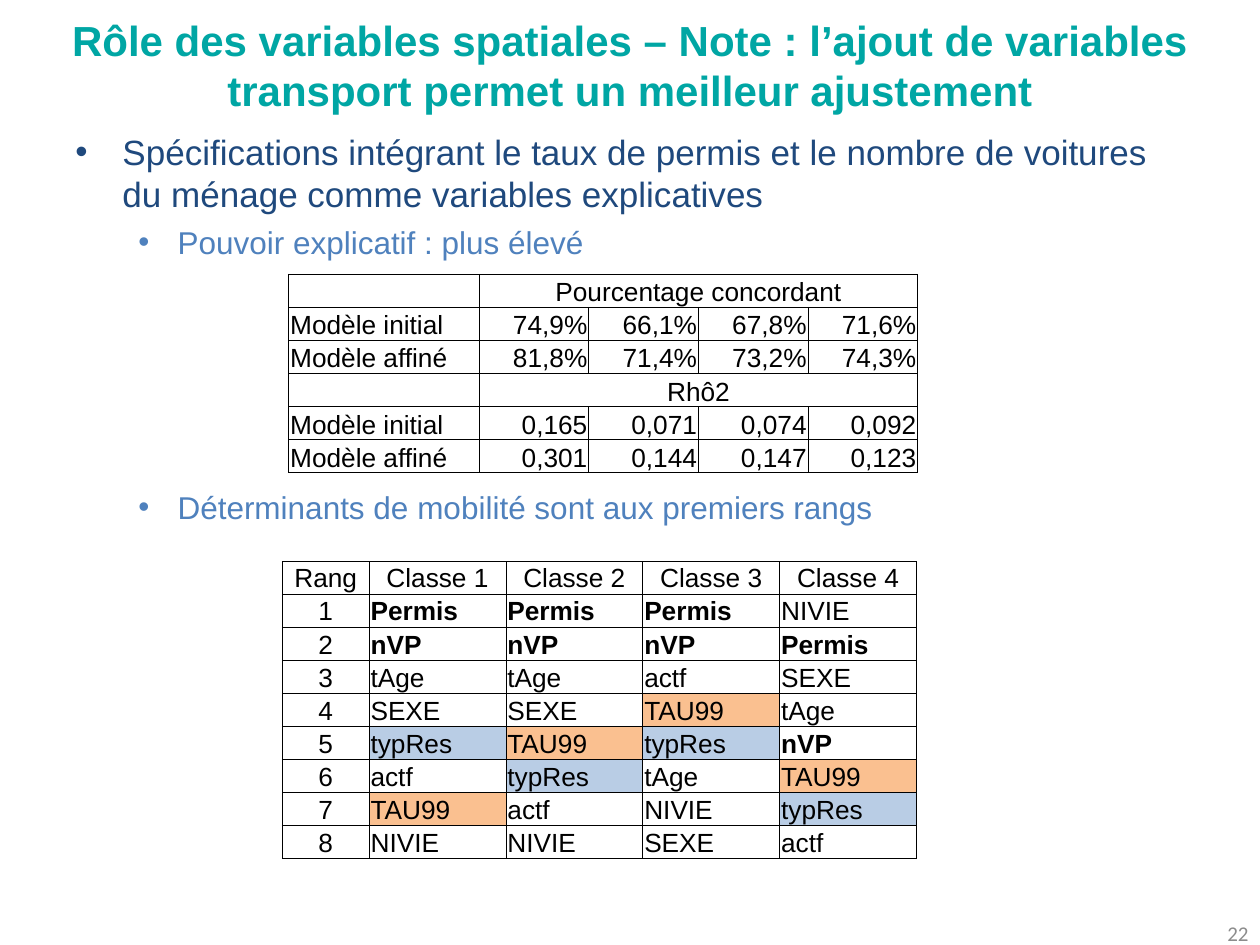
from dataclasses import dataclass

from lxml import etree
from pptx import Presentation
from pptx.dml.color import RGBColor
from pptx.enum.text import MSO_ANCHOR, PP_ALIGN
from pptx.oxml.ns import qn
from pptx.util import Cm, Pt

LEFT, CENTER, RIGHT = PP_ALIGN.LEFT, PP_ALIGN.CENTER, PP_ALIGN.RIGHT
TOP, MIDDLE, BOTTOM = MSO_ANCHOR.TOP, MSO_ANCHOR.MIDDLE, MSO_ANCHOR.BOTTOM


@dataclass(frozen=True)
class Theme:
    font: str = "Arial"
    number_font: str = "Calibri"
    title: str = "00A6A4"
    point: str = "1F497D"
    subpoint: str = "4F81BD"
    number: str = "8C8C8C"
    ink: str = "000000"
    title_size: int = 24
    point_size: int = 20
    subpoint_size: int = 18
    table_size: int = 15
    number_size: int = 12
    border: float = 0.5


THEME = Theme()
TITLE = "Rôle des variables spatiales – Note : l’ajout de variables transport permet un meilleur ajustement"
PAGE_NUMBER = "22"

# text, level, space before in points
BULLETS = [
    ("Spécifications intégrant le taux de permis et le nombre de voitures du ménage comme variables explicatives", 0, 0),
    ("Pouvoir explicatif : plus élevé", 1, 4.5),
    ("Déterminants de mobilité sont aux premiers rangs", 1, 130),
]
LEVELS = [
    (THEME.point_size, THEME.point, 0.95, 0.95),
    (THEME.subpoint_size, THEME.subpoint, 2.06, 0.79),
]

FIT = [
    ["", "Pourcentage concordant"],
    ["Modèle initial", "74,9%", "66,1%", "67,8%", "71,6%"],
    ["Modèle affiné", "81,8%", "71,4%", "73,2%", "74,3%"],
    ["", "Rhô2"],
    ["Modèle initial", "0,165", "0,071", "0,074", "0,092"],
    ["Modèle affiné", "0,301", "0,144", "0,147", "0,123"],
]
RANKS = [
    ["Rang", "Classe 1", "Classe 2", "Classe 3", "Classe 4"],
    ["1", "Permis", "Permis", "Permis", "NIVIE"],
    ["2", "nVP", "nVP", "nVP", "Permis"],
    ["3", "tAge", "tAge", "actf", "SEXE"],
    ["4", "SEXE", "SEXE", "TAU99", "tAge"],
    ["5", "typRes", "TAU99", "typRes", "nVP"],
    ["6", "actf", "typRes", "tAge", "TAU99"],
    ["7", "TAU99", "actf", "NIVIE", "typRes"],
    ["8", "NIVIE", "NIVIE", "SEXE", "actf"],
]
MOBILITY = {"Permis", "nVP"}
SPATIAL_FILLS = {"TAU99": "FAC090", "typRes": "B9CDE5"}


def style(para, size, color, align=LEFT, font=THEME.font, bold=False):
    para.alignment = align
    para.font.name = font
    para.font.size = Pt(size)
    para.font.bold = bold
    para.font.color.rgb = RGBColor.from_string(color)


def add_box(page, left, top, width, height, anchor):
    box = page.shapes.add_textbox(Cm(left), Cm(top), Cm(width), Cm(height))
    frame = box.text_frame
    frame.word_wrap = True
    frame.vertical_anchor = anchor
    return frame


def add_bullets(frame):
    for index, (text, level, space) in enumerate(BULLETS):
        para = frame.add_paragraph() if index else frame.paragraphs[0]
        size, color, margin, hanging = LEVELS[level]
        para.text = text
        para.level = level
        para.space_before = Pt(space)
        properties = para._p.get_or_add_pPr()
        properties.set("marL", str(Cm(margin)))
        properties.set("indent", str(-Cm(hanging)))
        etree.SubElement(properties, qn("a:buFont"), typeface=THEME.font)
        etree.SubElement(properties, qn("a:buChar"), char="•")
        style(para, size, color)


def add_borders(cell):
    properties = cell._tc.get_or_add_tcPr()
    for position, side in enumerate(("a:lnL", "a:lnR", "a:lnT", "a:lnB")):
        line = etree.Element(qn(side), w=str(Pt(THEME.border)))
        fill = etree.SubElement(line, qn("a:solidFill"))
        etree.SubElement(fill, qn("a:srgbClr"), val=THEME.ink)
        properties.insert(position, line)


def add_grid(page, rows, left, top, widths, row_height, anchor, align_of):
    size = Cm(sum(widths)), Cm(row_height * len(rows))
    table = page.shapes.add_table(len(rows), len(widths), Cm(left), Cm(top), *size).table
    table.first_row = table.horz_banding = False
    for column, width in zip(table.columns, widths):
        column.width = Cm(width)
    for r, texts in enumerate(rows):
        table.rows[r].height = Cm(row_height)
        for c in range(len(widths)):
            cell = table.cell(r, c)
            text = texts[c] if c < len(texts) else ""
            cell.margin_left = cell.margin_right = cell.margin_top = Cm(0.03)
            cell.margin_bottom = 0
            cell.vertical_anchor = anchor
            if text in SPATIAL_FILLS:
                cell.fill.solid()
                cell.fill.fore_color.rgb = RGBColor.from_string(SPATIAL_FILLS[text])
            else:
                cell.fill.background()
            add_borders(cell)
            para = cell.text_frame.paragraphs[0]
            if text:
                para.text = text
            else:
                etree.SubElement(para._p, qn("a:endParaRPr"), sz=str(THEME.table_size * 100))
            style(para, THEME.table_size, THEME.ink, align_of(r, c), bold=text in MOBILITY)
        if len(texts) < len(widths):
            table.cell(r, len(texts) - 1).merge(table.cell(r, len(widths) - 1))


def fit_align(row, column):
    if column == 0:
        return LEFT
    return CENTER if len(FIT[row]) == 2 else RIGHT


def rank_align(row, column):
    return CENTER if row == 0 or column == 0 else LEFT


def main():
    """Build the slide on the fit of the refined model and the ranks of its variables."""
    deck = Presentation()
    deck.slide_width, deck.slide_height = Cm(25.4), Cm(19.05)
    page = deck.slides.add_slide(deck.slide_layouts[6])

    title = add_box(page, 0, 0.53, 25.4, 1.55, MIDDLE).paragraphs[0]
    title.text = TITLE
    style(title, THEME.title_size, THEME.title, CENTER, bold=True)

    add_bullets(add_box(page, 1.27, 2.51, 22.86, 15.39, TOP))

    number = add_box(page, 19.5, 18.31, 5.92, 1.02, MIDDLE).paragraphs[0]
    number.text = PAGE_NUMBER
    style(number, THEME.number_size, THEME.number, RIGHT, THEME.number_font)

    add_grid(page, FIT, 5.82, 5.53, [3.84] + [2.21] * 4, 0.61, BOTTOM, fit_align)
    add_grid(page, RANKS, 5.69, 11.32, [1.75] + [2.76] * 4, 0.62, MIDDLE, rank_align)
    deck.save("out.pptx")


if __name__ == "__main__":
    main()
